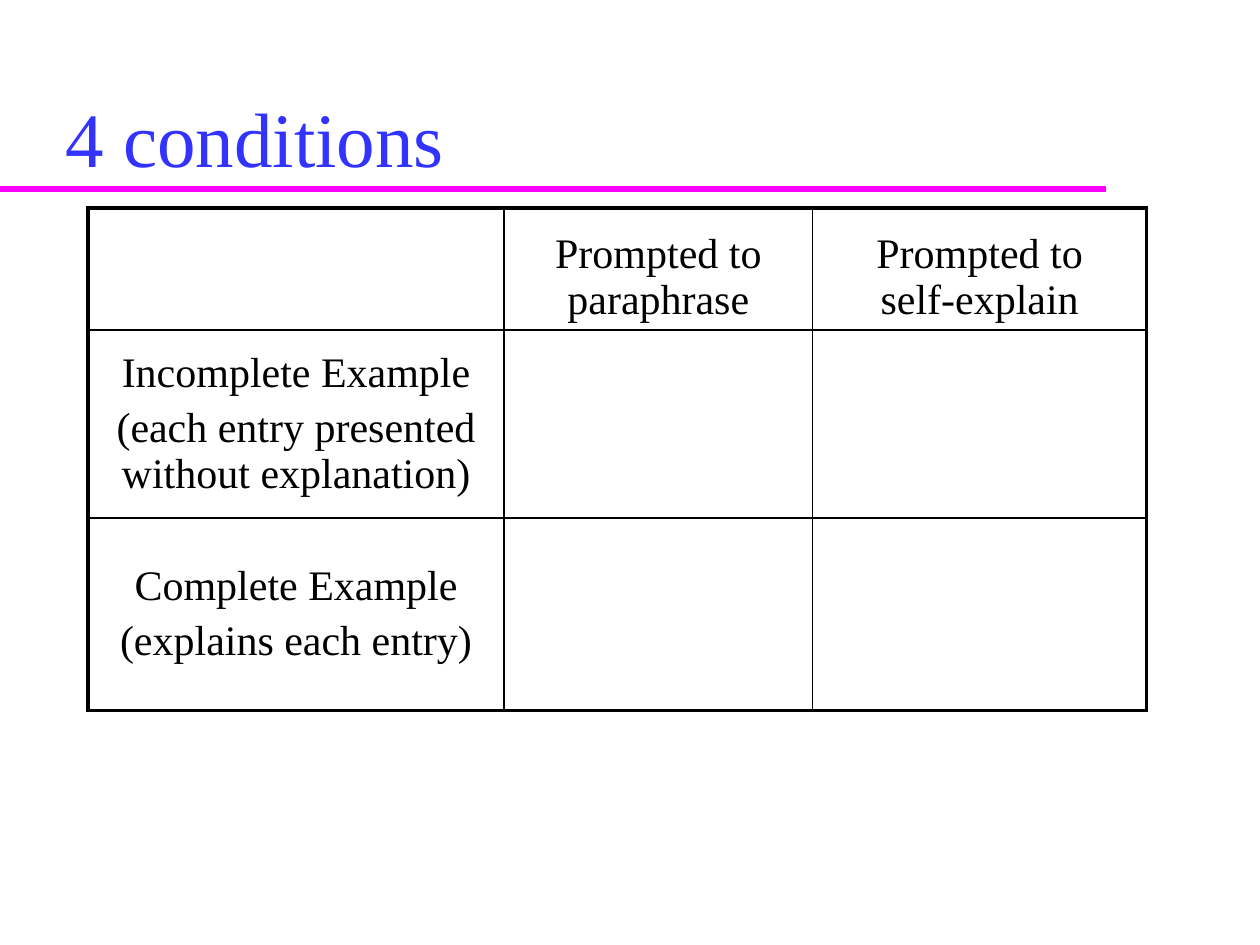
from lxml.etree import SubElement
from pptx import Presentation
from pptx.dml.color import RGBColor
from pptx.enum.shapes import MSO_CONNECTOR
from pptx.enum.text import MSO_ANCHOR, MSO_AUTO_SIZE, PP_ALIGN
from pptx.oxml import parse_xml
from pptx.oxml.ns import nsdecls, qn
from pptx.util import Inches, Pt

# Content
TITLE = "4 conditions"
ROWS = [
    [[], ["Prompted to paraphrase"], ["Prompted to\vself-explain"]],
    [["Incomplete Example", "(each entry presented without explanation)"], [], []],
    [["Complete Example", "(explains each entry)"], [], []],
]
COLUMN_WIDTHS = [3.3, 2.45, 2.65]
ROW_HEIGHTS = [0.97, 1.49, 1.53]

THEME = {
    "title": {"name": "Times New Roman", "size": Pt(44), "bold": False,
              "color": RGBColor(0x33, 0x33, 0xFF)},
    "cell": {"name": "Times New Roman", "size": Pt(24), "bold": False,
             "color": RGBColor(0, 0, 0)},
    "rule": RGBColor(0xFF, 0, 0xFF),
    "border": "000000",
    "outer": 2.25,
    "inner": 1,
    "paragraph_gap": Pt(4.8),
}


def format_font(font, style):
    for name, value in style.items():
        if name == "color":
            font.color.rgb = value
        else:
            setattr(font, name, value)


def set_borders(cell, widths):
    properties = cell._tc.get_or_add_tcPr()
    for position, (side, width) in enumerate(widths.items()):
        properties.insert(position, parse_xml(
            f'<a:ln{side} {nsdecls("a")} w="{Pt(width)}"><a:solidFill>'
            f'<a:srgbClr val="{THEME["border"]}"/></a:solidFill></a:ln{side}>'))


def fill_cell(cell, lines, anchor):
    cell.vertical_anchor = anchor
    for index, line in enumerate(lines):
        frame = cell.text_frame
        para = frame.add_paragraph() if index else frame.paragraphs[0]
        para.text = line
        para.alignment = PP_ALIGN.CENTER
        if index:
            para.space_before = THEME["paragraph_gap"]
        format_font(para.font, THEME["cell"])
        for span in para.runs:
            format_font(span.font, THEME["cell"])


deck = Presentation()
deck.slide_width, deck.slide_height = Inches(10), Inches(7.5)
page = deck.slides.add_slide(deck.slide_layouts[5])

# Title
title = page.shapes.title
for name, value in {"left": 0.42, "top": 0.29, "width": 8.5, "height": 1.21}.items():
    setattr(title, name, Inches(value))
title.text_frame.text = TITLE
title.text_frame.auto_size = MSO_AUTO_SIZE.NONE
title.text_frame.vertical_anchor = MSO_ANCHOR.BOTTOM
para = title.text_frame.paragraphs[0]
para.alignment = PP_ALIGN.LEFT
format_font(para.runs[0].font, THEME["title"])

# Rule under the title
rule = page.shapes.add_connector(MSO_CONNECTOR.STRAIGHT, 0, Inches(1.5),
                                 Inches(8.78), Inches(1.5))
rule.line.color.rgb = THEME["rule"]
rule.line.width = Pt(4)
SubElement(rule._element.spPr, qn("a:effectLst"))

# Table of conditions
table = page.shapes.add_table(
    len(ROW_HEIGHTS), len(COLUMN_WIDTHS), Inches(0.7), Inches(1.65),
    Inches(sum(COLUMN_WIDTHS)), Inches(sum(ROW_HEIGHTS))).table
table.first_row = table.horz_banding = False
for column, width in zip(table.columns, COLUMN_WIDTHS):
    column.width = Inches(width)
for row, height in zip(table.rows, ROW_HEIGHTS):
    row.height = Inches(height)

last_row, last_column = len(ROW_HEIGHTS) - 1, len(COLUMN_WIDTHS) - 1
for r, row in enumerate(ROWS):
    for c, lines in enumerate(row):
        cell = table.cell(r, c)
        cell.fill.background()
        fill_cell(cell, lines, MSO_ANCHOR.MIDDLE if r else MSO_ANCHOR.BOTTOM)
        on_edge = {"L": c == 0, "R": c == last_column, "T": r == 0, "B": r == last_row}
        set_borders(cell, {side: THEME["outer" if edge else "inner"]
                           for side, edge in on_edge.items()})

deck.save("out.pptx")
